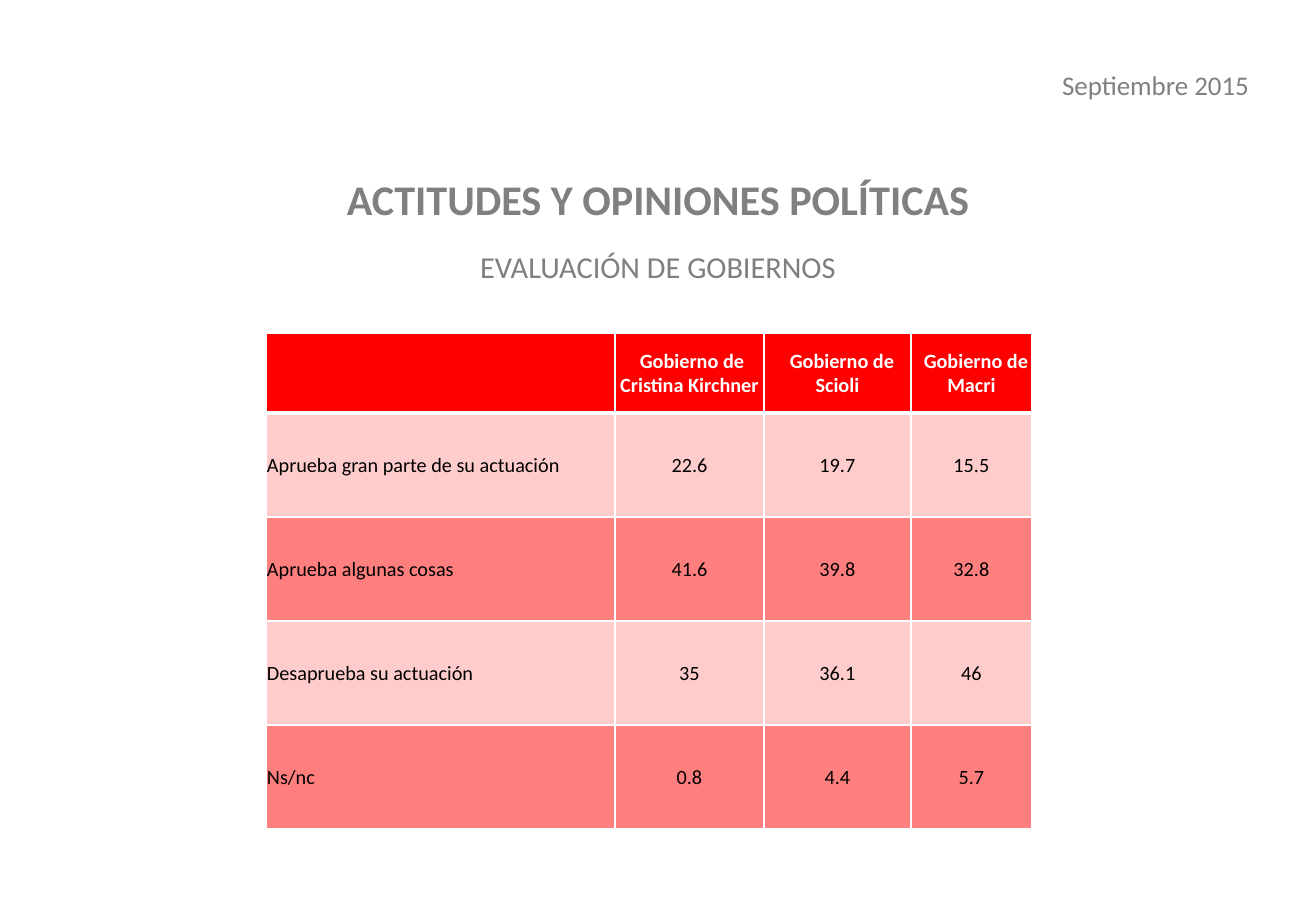
from lxml import etree
from pptx import Presentation
from pptx.dml.color import RGBColor
from pptx.enum.text import MSO_ANCHOR, MSO_AUTO_SIZE, PP_ALIGN
from pptx.oxml.ns import qn
from pptx.util import Pt

PX = 7526  # EMU per pixel
RED = RGBColor(0xFF, 0x00, 0x00)
WHITE = RGBColor(0xFF, 0xFF, 0xFF)
BLACK = RGBColor(0x00, 0x00, 0x00)
GRAY = RGBColor(0x80, 0x80, 0x80)
DIM = RGBColor(0x7F, 0x7F, 0x7F)
LEFT, MID, RIGHT = PP_ALIGN.LEFT, PP_ALIGN.CENTER, PP_ALIGN.RIGHT
MIDDLE, BOTTOM = MSO_ANCHOR.MIDDLE, MSO_ANCHOR.BOTTOM
FIXED = MSO_AUTO_SIZE.NONE


def style(para, size, color, bold, align):
    para.alignment = align
    font = para.font
    font.name, font.size, font.bold = "Calibri", Pt(size), bold
    font.color.rgb = color


def border(cell, side, width, place):
    line = etree.Element(qn("a:ln" + side), w=str(Pt(width)))
    fill = etree.SubElement(line, qn("a:solidFill"))
    etree.SubElement(fill, qn("a:srgbClr"), val=str(WHITE))
    cell._tc.get_or_add_tcPr().insert(place, line)


deck = Presentation()
deck.slide_width, deck.slide_height = 1316 * PX, 911 * PX
slide = deck.slides.add_slide(deck.slide_layouts[5])

# Table
rows = [
    ["", "Gobierno de Cristina Kirchner", "Gobierno de Scioli", "Gobierno de Macri"],
    ["Aprueba gran parte de su actuación", "22.6", "19.7", "15.5"],
    ["Aprueba algunas cosas", "41.6", "39.8", "32.8"],
    ["Desaprueba su actuación", "35", "36.1", "46"],
    ["Ns/nc", "0.8", "4.4", "5.7"],
]
widths = [349, 149, 147, 121]
heights = [80] + [104] * 4
table = slide.shapes.add_table(
    len(rows), len(widths), 266 * PX, 333 * PX, sum(widths) * PX, sum(heights) * PX
).table
for col, width in zip(table.columns, widths):
    col.width = width * PX
for row, height in zip(table.rows, heights):
    row.height = height * PX

for r, row in enumerate(rows):
    head = r == 0
    for c, text in enumerate(row):
        cell = table.cell(r, c)
        cell.text = text
        cell.vertical_anchor = MIDDLE
        cell.margin_left = cell.margin_right = cell.margin_top = PX
        cell.margin_bottom = 0
        para = cell.text_frame.paragraphs[0]
        style(para, 12, WHITE if head else BLACK, head, MID if head or c else LEFT)

        # Red fill, paler in the body rows
        cell.fill.solid()
        cell.fill.fore_color.rgb = RED
        if head:
            # First line set slightly to the right
            para._p.get_or_add_pPr().set("indent", str((5 if c == 1 else 9) * PX))
        else:
            tint = cell._tc.tcPr.find(".//" + qn("a:srgbClr"))
            alpha = 20000 if r % 2 else 50000
            etree.SubElement(tint, qn("a:alpha"), val=str(alpha))

        # White rules, thick below the header
        sides = {"L": 1, "R": 1, "T": 3 if r == 1 else 1, "B": 3 if head else 1}
        for place, (side, width) in enumerate(sides.items()):
            border(cell, side, width, place)

# Title and subtitle
title = slide.shapes.title
title.left, title.top, title.width, title.height = 0, 179 * PX, 1316 * PX, 199 * PX
frame = title.text_frame
frame.auto_size = FIXED
frame.vertical_anchor = BOTTOM
frame.margin_bottom = 94 * PX
frame.text = "ACTITUDES Y OPINIONES POLÍTICAS"
name = frame.paragraphs[0]
style(name, 25, GRAY, True, MID)
name.line_spacing = 0.8
sub = frame.add_paragraph()
sub.text = "EVALUACIÓN DE GOBIERNOS"
style(sub, 18, DIM, False, MID)
sub.line_spacing = 0.8
sub.space_before = Pt(18.5)

# Date
date = slide.shapes.add_textbox(1041 * PX, 63 * PX, 220 * PX, 45 * PX).text_frame
date.word_wrap = True
date.text = "Septiembre 2015"
style(date.paragraphs[0], 16, GRAY, False, RIGHT)

deck.save("out.pptx")
